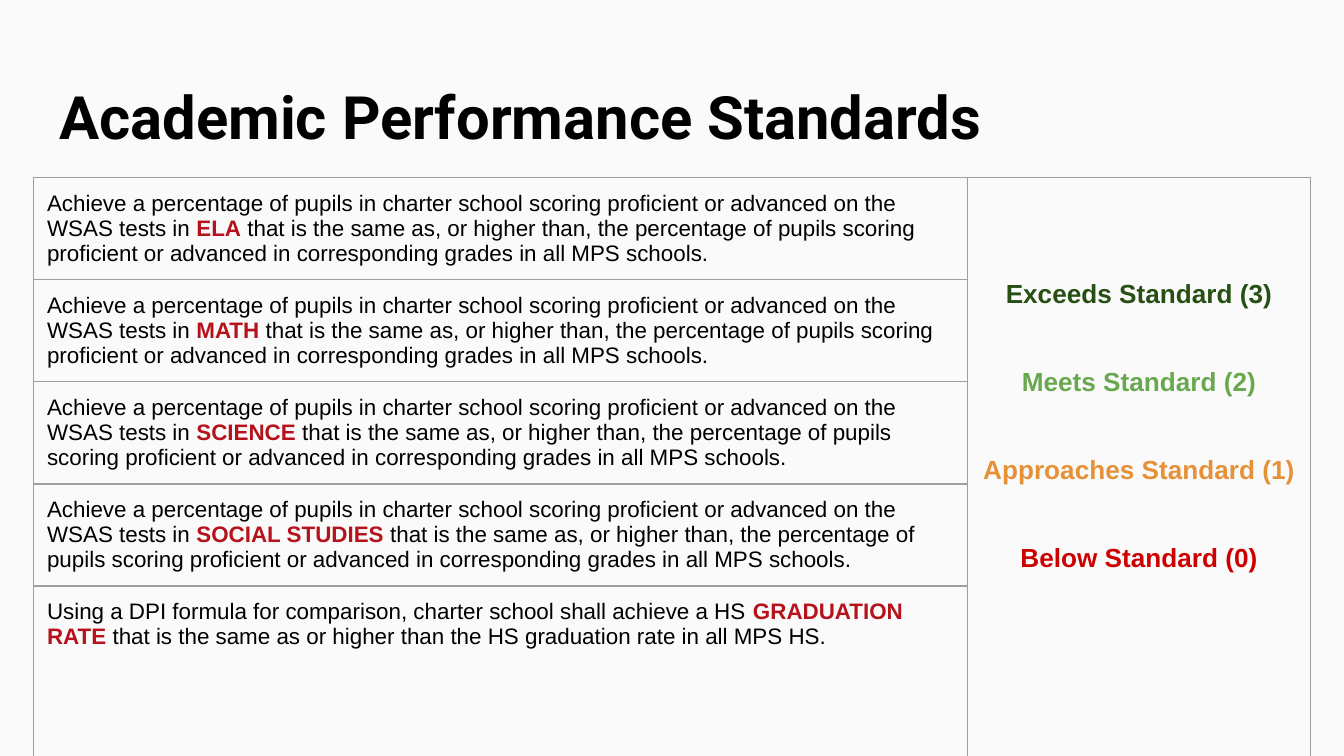
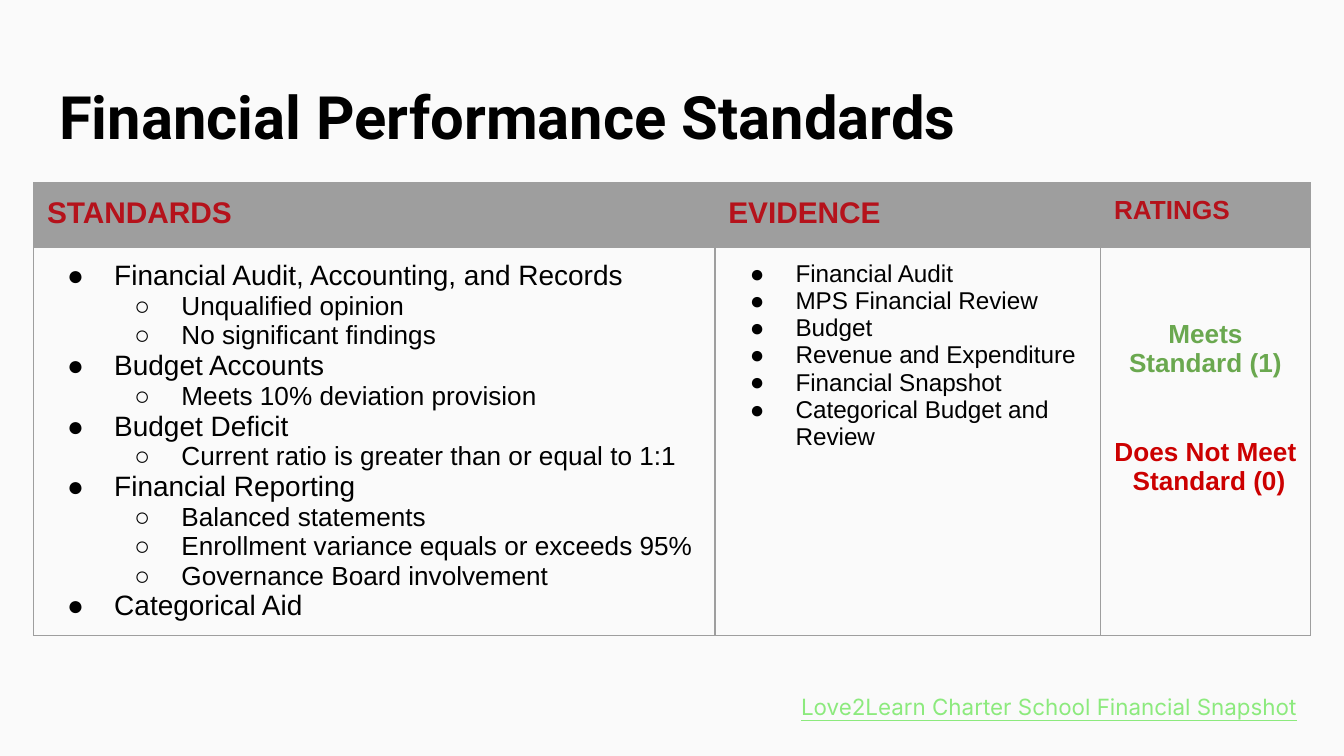
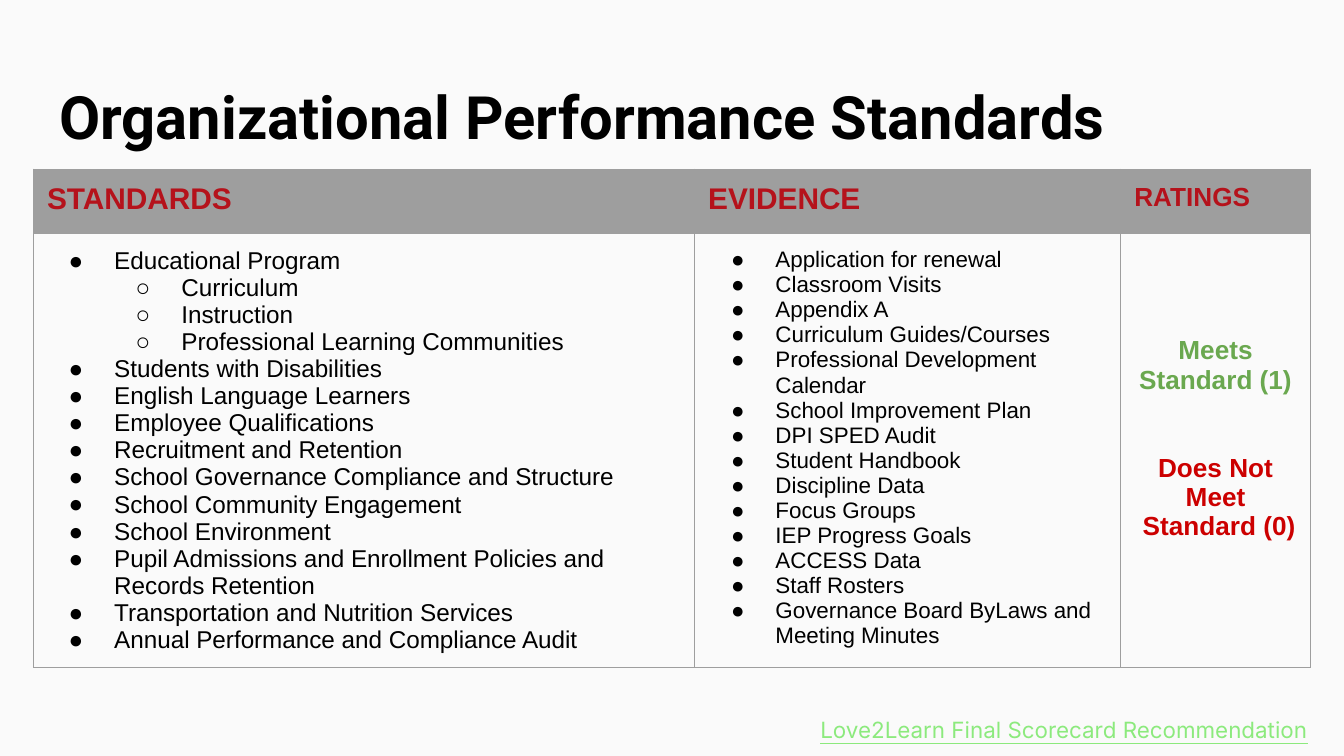
import pptx
import pptx.util
import pptx.dml.color
import pptx.enum.text
import pptx.oxml.ns
import lxml.etree

Inches, Pt = pptx.util.Inches, pptx.util.Pt
ALIGN = pptx.enum.text.PP_ALIGN

# Shared look
PAPER, INK, RED, GRAY, LINK = "FAFAFA", "000000", "B5121B", "9E9E9E", "8CEA7D"
DARK_GREEN, GREEN, ORANGE, BRIGHT_RED = "274E13", "6AA84F", "E69138", "CC0000"
BODY_FONT, TITLE_FONT, LINK_FONT = "Arial", "Roboto", "Inter"
PADDING = 0.1
TABLE_LEFT = 0.25
RATING_SIZE = 14
RATING_LINE = 0.22
RATING_GAP = 31.5

# Academic content: text before, keyword, text after
TESTS_LEAD = ("Achieve a percentage of pupils in charter school scoring proficient "
              "or advanced on the WSAS tests in ")
TESTS_TAIL = (" that is the same as, or higher than, the percentage of pupils scoring "
              "proficient or advanced in corresponding grades in all MPS schools.")
ACADEMIC_GOALS = [(TESTS_LEAD, subject, TESTS_TAIL)
                  for subject in ("ELA", "MATH", "SCIENCE", "SOCIAL STUDIES")]
ACADEMIC_GOALS.append((
    "Using a DPI formula for comparison, charter school shall achieve a HS ",
    "GRADUATION RATE",
    " that is the same as or higher than the HS graduation rate in all MPS HS."))

# Ratings: text, colour, whether a gap comes before it
ACADEMIC_RATINGS = [
    ("Exceeds Standard (3)", DARK_GREEN, False),
    ("Meets Standard (2)", GREEN, True),
    ("Approaches Standard (1)", ORANGE, True),
    ("Below Standard (0)", BRIGHT_RED, True),
]
PASS_RATINGS = [
    ("Meets Standard (1)", GREEN, False),
    ("Does Not Meet", BRIGHT_RED, True),
    (" Standard (0)", BRIGHT_RED, False),
]

# Scorecards: standards are (heading, sub-items); sizes are per list level
HEADINGS = [("STANDARDS", 16), ("EVIDENCE", 16), ("RATINGS", 14)]
SCORECARDS = [
    {
        "title": "Financial Performance Standards",
        "top": 1.36, "columns": (5.07, 2.87, 1.56), "rating_lines": 2,
        "standard_sizes": (15, 14), "standard_hang": 0.35,
        "standards": [
            ("Financial Audit, Accounting, and Records",
             ["Unqualified opinion", "No significant findings"]),
            ("Budget Accounts", ["Meets 10% deviation provision"]),
            ("Budget Deficit", ["Current ratio is greater than or equal to 1:1"]),
            ("Financial Reporting",
             ["Balanced statements", "Enrollment variance equals or exceeds 95%",
              "Governance Board involvement"]),
            ("Categorical Aid", []),
        ],
        "evidence_size": 13, "evidence_hang": 0.34,
        "evidence": ["Financial Audit", "MPS Financial Review", "Budget",
                     "Revenue and Expenditure", "Financial Snapshot",
                     "Categorical Budget and Review"],
        "link": "Love2Learn Charter School Financial Snapshot",
        "link_box": (4.08, 5.06, 5.67, 0.39),
    },
    {
        "title": "Organizational Performance Standards",
        "top": 1.26, "columns": (4.92, 3.17, 1.41), "rating_lines": 3,
        "standard_sizes": (13, 13), "standard_hang": 0.34,
        "standards": [
            ("Educational Program",
             ["Curriculum", "Instruction", "Professional Learning Communities"]),
            ("Students with Disabilities", []),
            ("English Language Learners", []),
            ("Employee Qualifications", []),
            ("Recruitment and Retention", []),
            ("School Governance Compliance and Structure", []),
            ("School Community Engagement", []),
            ("School Environment", []),
            ("Pupil Admissions and Enrollment Policies and Records Retention", []),
            ("Transportation and Nutrition Services", []),
            ("Annual Performance and Compliance Audit", []),
        ],
        "evidence_size": 12, "evidence_hang": 0.33,
        "evidence": ["Application for renewal", "Classroom Visits", "Appendix A",
                     "Curriculum Guides/Courses", "Professional Development Calendar",
                     "School Improvement Plan", "DPI SPED Audit", "Student Handbook",
                     "Discipline Data", "Focus Groups", "IEP Progress Goals",
                     "ACCESS Data", "Staff Rosters",
                     "Governance Board ByLaws and Meeting Minutes"],
        "link": "Love2Learn Final Scorecard Recommendation",
        "link_box": (5.7, 5.23, 4.13, 0.28),
    },
]


def color(value):
    return pptx.dml.color.RGBColor.from_string(value)


def add_element(parent, tag, **attributes):
    return lxml.etree.SubElement(parent, pptx.oxml.ns.qn(tag), attributes)


def style_span(span, size, tint=INK, bold=False, font=BODY_FONT):
    span.font.size = Pt(size)
    span.font.name = font
    span.font.bold = bold
    span.font.color.rgb = color(tint)


def pad(frame):
    frame.word_wrap = True
    frame.vertical_anchor = pptx.enum.text.MSO_ANCHOR.TOP
    frame.margin_left = frame.margin_right = Inches(PADDING)
    frame.margin_top = frame.margin_bottom = Inches(PADDING)


def paragraphs_for(frame, count):
    """Return the given number of paragraphs, the first being the existing one."""
    return [frame.paragraphs[0]] + [frame.add_paragraph() for _ in range(count - 1)]


def add_page(deck, title):
    page = deck.slides.add_slide(deck.slide_layouts[5])
    box = page.shapes.title
    box.left, box.top, box.width, box.height = map(Inches, (0.34, 0.49, 9.32, 0.63))
    frame = box.text_frame
    frame.text = title
    pad(frame)
    frame.auto_size = pptx.enum.text.MSO_AUTO_SIZE.NONE
    para = frame.paragraphs[0]
    para.alignment = ALIGN.LEFT
    style_span(para.runs[0], 32, bold=True, font=TITLE_FONT)
    return page


def add_grid(page, top, columns, rows):
    """Add an unfilled table with thin gray borders."""
    frame = page.shapes.add_table(len(rows), len(columns), Inches(TABLE_LEFT), Inches(top),
                                  Inches(sum(columns)), Inches(sum(rows)))
    grid = frame.table
    grid.first_row = grid.horz_banding = False
    for column, width in zip(grid.columns, columns):
        column.width = Inches(width)
    for row, height in zip(grid.rows, rows):
        row.height = Inches(height)
    for cell in grid.iter_cells():
        cell.margin_left = cell.margin_right = Inches(PADDING)
        cell.margin_top = cell.margin_bottom = Inches(PADDING)
        properties = cell._tc.get_or_add_tcPr()
        for side in ("a:lnL", "a:lnR", "a:lnT", "a:lnB"):
            line = add_element(properties, side, w=str(Pt(0.75)))
            add_element(add_element(line, "a:solidFill"), "a:srgbClr", val=GRAY)
        cell.fill.background()
    return grid


def fill_ratings(cell, ratings, lines_above):
    cell.margin_top = Inches(PADDING + lines_above * RATING_LINE)
    paras = paragraphs_for(cell.text_frame, len(ratings))
    for para, (text, tint, gap) in zip(paras, ratings):
        para.text = text
        para.alignment = ALIGN.CENTER
        if gap:
            para.space_before = Pt(RATING_GAP)
        style_span(para.runs[0], RATING_SIZE, tint, True)


def fill_bullets(cell, items, sizes, hang):
    """Write (level, text) items as a bulleted list."""
    paras = paragraphs_for(cell.text_frame, len(items))
    for para, (level, text) in zip(paras, items):
        para.text = text
        para.level = level
        properties = para._p.get_or_add_pPr()
        properties.set("marL", str(Inches(0.5 * (level + 1))))
        properties.set("indent", str(-Inches(hang)))
        add_element(add_element(properties, "a:buClr"), "a:srgbClr", val=INK)
        add_element(properties, "a:buFont", typeface=BODY_FONT)
        add_element(properties, "a:buChar", char="●○"[level])
        style_span(para.runs[0], sizes[level])


def add_link_line(page, text, place):
    box = page.shapes.add_textbox(*map(Inches, place))
    box.text_frame.text = text
    pad(box.text_frame)
    para = box.text_frame.paragraphs[0]
    para.alignment = ALIGN.RIGHT
    style_span(para.runs[0], 12, LINK, font=LINK_FONT)
    para.runs[0].font.underline = True


def build_academic(deck):
    page = add_page(deck, "Academic Performance Standards")
    grid = add_grid(page, 1.32, (6.95, 2.55), [0.76] * 4 + [1.35])
    for row, parts in enumerate(ACADEMIC_GOALS):
        para = grid.cell(row, 0).text_frame.paragraphs[0]
        for part, tint in zip(parts, (INK, RED, INK)):
            span = para.add_run()
            span.text = part
            style_span(span, 12, tint, tint == RED)
    grid.cell(0, 1).merge(grid.cell(len(ACADEMIC_GOALS) - 1, 1))
    fill_ratings(grid.cell(0, 1), ACADEMIC_RATINGS, 3)


def build_scorecard(deck, card):
    page = add_page(deck, card["title"])
    grid = add_grid(page, card["top"], card["columns"], (0.48, 0.62, 0.59))

    # Header band
    for column, (heading, size) in enumerate(HEADINGS):
        cell = grid.cell(0, column)
        cell.fill.solid()
        cell.fill.fore_color.rgb = color(GRAY)
        cell.text_frame.text = heading
        style_span(cell.text_frame.paragraphs[0].runs[0], size, RED, True)
        grid.cell(1, column).merge(grid.cell(2, column))

    # Lists and ratings
    standards = []
    for heading, details in card["standards"]:
        standards.append((0, heading))
        standards.extend((1, detail) for detail in details)
    evidence = [(0, item) for item in card["evidence"]]
    fill_bullets(grid.cell(1, 0), standards, card["standard_sizes"], card["standard_hang"])
    fill_bullets(grid.cell(1, 1), evidence, (card["evidence_size"],), card["evidence_hang"])
    fill_ratings(grid.cell(1, 2), PASS_RATINGS, card["rating_lines"])

    add_link_line(page, card["link"], card["link_box"])


def main():
    deck = pptx.Presentation()
    deck.slide_width = Inches(10)
    deck.slide_height = deck.slide_width * 9 // 16
    background = deck.slide_master.background.fill
    background.solid()
    background.fore_color.rgb = color(PAPER)
    build_academic(deck)
    for card in SCORECARDS:
        build_scorecard(deck, card)
    deck.save("out.pptx")


if __name__ == "__main__":
    main()
